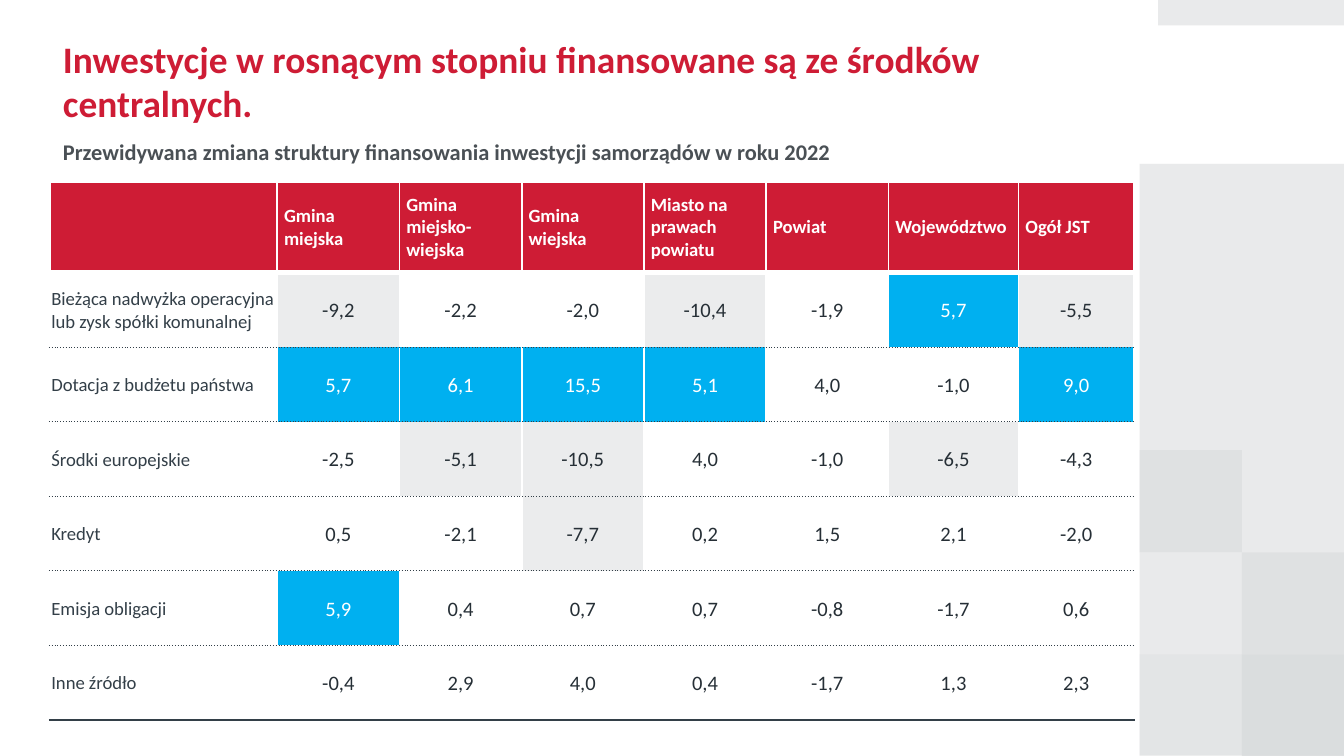
"""Build the slide on the expected change in local government investment funding."""

from dataclasses import dataclass
from typing import NamedTuple

import lxml.etree
import pptx
import pptx.dml.color
import pptx.enum.shapes
import pptx.enum.text
import pptx.oxml.ns
import pptx.slide
import pptx.table
import pptx.text.text
import pptx.util

Cm = pptx.util.Cm
Align = pptx.enum.text.PP_ALIGN
Anchor = pptx.enum.text.MSO_ANCHOR


@dataclass(frozen=True)
class Theme:
    font: str = "Calibri"
    red: str = "CE1C35"
    blue: str = "00B0F0"
    grey: str = "EBECED"
    white: str = "FFFFFF"
    slate: str = "333F48"
    subtitle: str = "4A5055"
    number: str = "262F36"
    panel: str = "E4E5E6"
    tile: str = "D7DADB"
    title_size: int = 20
    subtitle_size: int = 12
    label_size: int = 10
    number_size: int = 11


THEME = Theme()


class Block(NamedTuple):
    left: float
    top: float
    width: float
    height: float
    color: str
    opacity: int


class TextStyle(NamedTuple):
    size: int
    color: str
    bold: bool = False
    align: Align = Align.LEFT


class Border(NamedTuple):
    color: str
    width: float
    dash: str = "solid"


class CellStyle(NamedTuple):
    text: TextStyle
    fill: str | None
    margins: tuple[float, float, float, float]
    top: Border
    bottom: Border


class FundingRow(NamedTuple):
    source: str
    changes: tuple[float, ...]


TILE = 1.93
TILE_LEFT, TILE_TOP = 21.54, 8.51
BLOCKS = [
    Block(TILE_LEFT, 3.1, 2 * TILE, 11.18, THEME.panel, 80),
    Block(21.89, 0, 3.51, 0.48, THEME.panel, 80),
] + [
    Block(TILE_LEFT + column * TILE, TILE_TOP + row * TILE, TILE, TILE, THEME.tile, opacity)
    for column, row, opacity in ((1, 2, 80), (0, 2, 30), (1, 1, 50), (0, 0, 50))
]

HEADERS = ("", "Gmina miejska", "Gmina miejsko-wiejska", "Gmina wiejska",
           "Miasto na prawach powiatu", "Powiat", "Województwo", "Ogół JST")
ROWS = [
    FundingRow("Bieżąca nadwyżka operacyjna lub zysk spółki komunalnej",
               (-9.2, -2.2, -2.0, -10.4, -1.9, 5.7, -5.5)),
    FundingRow("Dotacja z budżetu państwa", (5.7, 6.1, 15.5, 5.1, 4.0, -1.0, 9.0)),
    FundingRow("Środki europejskie", (-2.5, -5.1, -10.5, 4.0, -1.0, -6.5, -4.3)),
    FundingRow("Kredyt", (0.5, -2.1, -7.7, 0.2, 1.5, 2.1, -2.0)),
    FundingRow("Emisja obligacji", (5.9, 0.4, 0.7, 0.7, -0.8, -1.7, 0.6)),
    FundingRow("Inne źródło", (-0.4, 2.9, 4.0, 0.4, -1.7, 1.3, 2.3)),
]
COLUMN_WIDTHS = (4.3, *[2.31] * 5, 2.46, 2.18)
HEADER_HEIGHT, ROW_HEIGHT = 1.7, 1.41
HIGHLIGHT_LIMIT = 5

WHITE_LINE = Border(THEME.white, 1)
HEADER_LINE = Border(THEME.white, 3)
DOTTED_LINE = Border(THEME.slate, 0.5, "sysDot")
CLOSING_LINE = Border(THEME.slate, 1)
HEADER_MARGINS = (0.13, 0.13, 0.13, 0.13)
BODY_MARGINS = (0.03, 0.03, 0.03, 0)


def rgb(color: str) -> pptx.dml.color.RGBColor:
    return pptx.dml.color.RGBColor.from_string(color)


def write_text(frame: pptx.text.text.TextFrame, text: str, style: TextStyle) -> None:
    frame.word_wrap = True
    paragraph = frame.paragraphs[0]
    paragraph.text = text
    paragraph.alignment = style.align
    paragraph.font.name = THEME.font
    paragraph.font.size = pptx.util.Pt(style.size)
    paragraph.font.bold = style.bold
    paragraph.font.color.rgb = rgb(style.color)


def add_block(slide: pptx.slide.Slide, block: Block) -> None:
    shape = slide.shapes.add_shape(pptx.enum.shapes.MSO_SHAPE.RECTANGLE,
                                   *(Cm(length) for length in block[:4]))
    shape.shadow.inherit = False
    shape.line.fill.background()
    shape.fill.solid()
    shape.fill.fore_color.rgb = rgb(block.color)
    color = shape.fill._xPr.find(".//" + pptx.oxml.ns.qn("a:srgbClr"))
    lxml.etree.SubElement(color, pptx.oxml.ns.qn("a:alpha"), val=str(block.opacity * 1000))


def add_heading(slide: pptx.slide.Slide, text: str, top: float, height: float,
                style: TextStyle, anchor: Anchor) -> None:
    box = slide.shapes.add_textbox(Cm(0.94), Cm(top), Cm(19.15), Cm(height))
    box.text_frame.vertical_anchor = anchor
    write_text(box.text_frame, text, style)


def add_border(cell: pptx.table._Cell, side: str, border: Border) -> None:
    qn = pptx.oxml.ns.qn
    line = lxml.etree.SubElement(cell._tc.get_or_add_tcPr(), qn(f"a:ln{side}"),
                                 w=str(pptx.util.Pt(border.width)))
    fill = lxml.etree.SubElement(line, qn("a:solidFill"))
    lxml.etree.SubElement(fill, qn("a:srgbClr"), val=border.color)
    lxml.etree.SubElement(line, qn("a:prstDash"), val=border.dash)


def fill_cell(cell: pptx.table._Cell, text: str, style: CellStyle) -> None:
    sides = {"L": WHITE_LINE, "R": WHITE_LINE, "T": style.top, "B": style.bottom}
    for side, border in sides.items():
        add_border(cell, side, border)
    if style.fill:
        cell.fill.solid()
        cell.fill.fore_color.rgb = rgb(style.fill)
    else:
        cell.fill.background()
    cell.vertical_anchor = Anchor.MIDDLE
    (cell.margin_left, cell.margin_top,
     cell.margin_right, cell.margin_bottom) = map(Cm, style.margins)
    write_text(cell.text_frame, text, style.text)


def change_colors(change: float) -> tuple[str | None, str]:
    if change > HIGHLIGHT_LIMIT:
        return THEME.blue, THEME.white
    if change < -HIGHLIGHT_LIMIT:
        return THEME.grey, THEME.number
    return None, THEME.number


def add_funding_table(slide: pptx.slide.Slide) -> None:
    table = slide.shapes.add_table(
        len(ROWS) + 1, len(HEADERS), Cm(0.94), Cm(3.45), Cm(sum(COLUMN_WIDTHS)),
        Cm(HEADER_HEIGHT + len(ROWS) * ROW_HEIGHT)).table
    table.first_row = table.horz_banding = False
    for column, width in zip(table.columns, COLUMN_WIDTHS):
        column.width = Cm(width)
    for index, row in enumerate(table.rows):
        row.height = Cm(ROW_HEIGHT if index else HEADER_HEIGHT)

    header = CellStyle(TextStyle(THEME.label_size, THEME.white, True), THEME.red,
                       HEADER_MARGINS, WHITE_LINE, HEADER_LINE)
    for index, text in enumerate(HEADERS):
        fill_cell(table.cell(0, index), text, header)
    for index, row in enumerate(ROWS, 1):
        top = HEADER_LINE if index == 1 else DOTTED_LINE
        bottom = CLOSING_LINE if index == len(ROWS) else DOTTED_LINE
        label = TextStyle(THEME.label_size, THEME.slate)
        fill_cell(table.cell(index, 0), row.source,
                  CellStyle(label, None, BODY_MARGINS, top, bottom))
        for column, change in enumerate(row.changes, 1):
            fill, color = change_colors(change)
            number = TextStyle(THEME.number_size, color, align=Align.CENTER)
            fill_cell(table.cell(index, column), f"{change:.1f}".replace(".", ","),
                      CellStyle(number, fill, BODY_MARGINS, top, bottom))


def main() -> None:
    presentation = pptx.Presentation()
    presentation.slide_width, presentation.slide_height = Cm(25.4), Cm(14.29)
    slide = presentation.slides.add_slide(presentation.slide_layouts[6])
    for block in BLOCKS:
        add_block(slide, block)
    add_heading(slide, "Inwestycje w rosnącym stopniu finansowane są ze środków centralnych.",
                0.56, 1.93, TextStyle(THEME.title_size, THEME.red, True), Anchor.MIDDLE)
    add_heading(slide, "Przewidywana zmiana struktury finansowania inwestycji samorządów w roku 2022",
                2.49, 0.76, TextStyle(THEME.subtitle_size, THEME.subtitle, True), Anchor.TOP)
    add_funding_table(slide)
    presentation.save("out.pptx")


if __name__ == "__main__":
    main()
